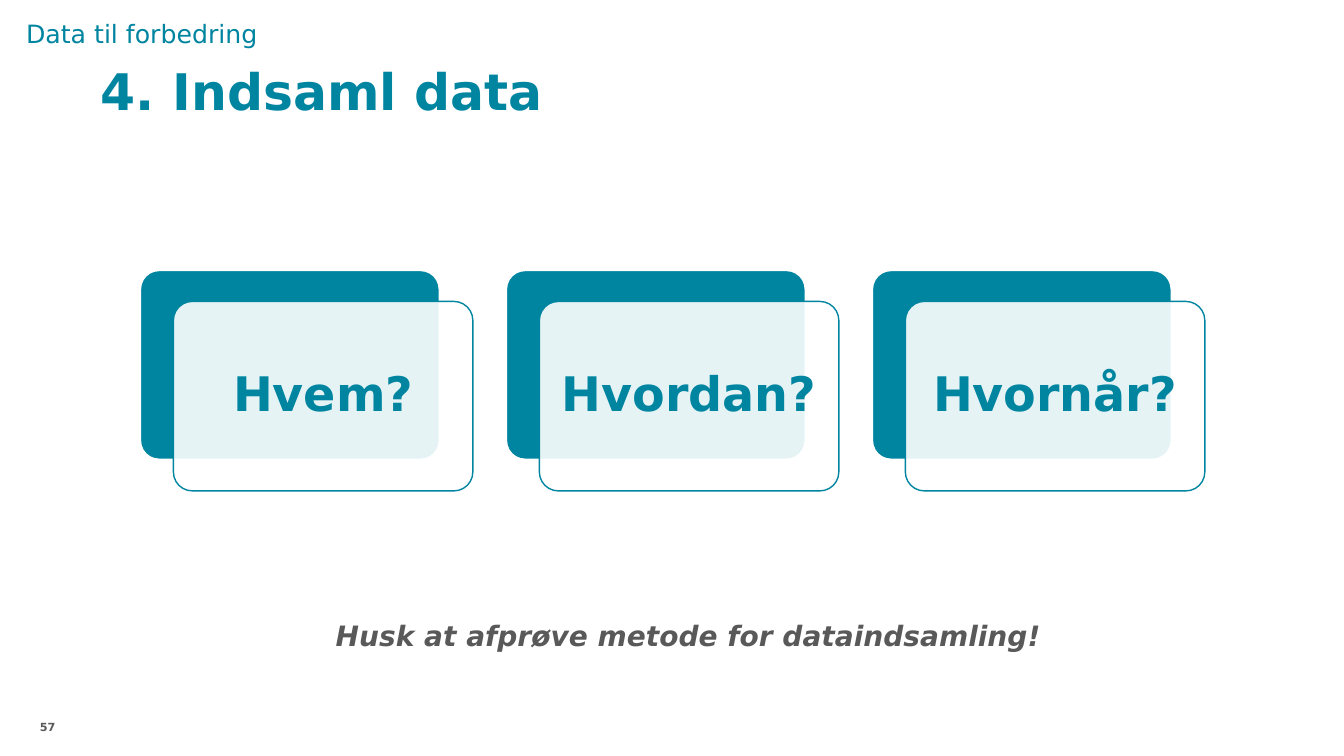
from lxml.etree import SubElement
from pptx import Presentation
from pptx.dml.color import RGBColor
from pptx.enum.shapes import MSO_SHAPE as Shape
from pptx.enum.text import MSO_ANCHOR as Anchor, PP_ALIGN as Align
from pptx.oxml.ns import qn
from pptx.util import Inches, Pt

FONT = "DejaVu Sans"
TEAL, TEXT_TEAL, GREY, WHITE = "0085A1", "0085A0", "595959", "FFFFFF"
QUESTIONS = ["Hvem?", "Hvordan?", "Hvornår?"]
CARD_WIDTH, CARD_HEIGHT = 2.97, 1.88
CARD_PITCH = 3.63
FRONT_SHIFT = 0.33, 0.31


def paint(color_format, hex_color):
    color_format.rgb = RGBColor.from_string(hex_color)


def write(frame, text, size, color, bold=False, italic=False, align=Align.LEFT,
          anchor=Anchor.TOP, inset=(0, 0), spacing=None):
    """Fill a text frame with one run; inset is (horizontal, vertical) in inches."""
    frame.word_wrap = True
    frame.vertical_anchor = anchor
    frame.margin_left = frame.margin_right = Inches(inset[0])
    frame.margin_top = frame.margin_bottom = Inches(inset[1])
    paragraph = frame.paragraphs[0]
    paragraph.alignment = align
    paragraph.line_spacing = spacing
    run = paragraph.add_run()
    run.text = text
    font = run.font
    font.name, font.size, font.bold, font.italic = FONT, Pt(size), bold, italic
    paint(font.color, color)


def add_label(slide, box, text, size, color, **style):
    label = slide.shapes.add_textbox(*map(Inches, box))
    write(label.text_frame, text, size, color, **style)


def add_panel(slide, left, top, fill, outline, outline_width):
    panel = slide.shapes.add_shape(
        Shape.ROUNDED_RECTANGLE,
        *map(Inches, (left, top, CARD_WIDTH, CARD_HEIGHT)))
    panel.adjustments[0] = 0.1
    panel.shadow.inherit = False
    panel.fill.solid()
    paint(panel.fill.fore_color, fill)
    paint(panel.line.color, outline)
    panel.line.width = Pt(outline_width)
    return panel


def add_question_card(slide, left, top, question):
    """A solid panel with a translucent panel shifted down and right over it."""
    add_panel(slide, left, top, TEAL, WHITE, 1.5)
    shift_x, shift_y = FRONT_SHIFT
    front = add_panel(slide, left + shift_x, top + shift_y, WHITE, TEAL, 1)
    fill_color = front.fill._xPr.find(qn("a:solidFill"))[0]
    SubElement(fill_color, qn("a:alpha"), val="90000")
    write(front.text_frame, question, 34, TEXT_TEAL, bold=True,
          align=Align.CENTER, anchor=Anchor.MIDDLE, inset=(0.14, 0.14), spacing=0.9)


def add_header(slide):
    add_label(slide, (1, 0.02, 10.55, 1.18), "4. Indsaml data", 36, TEAL,
              bold=True, anchor=Anchor.BOTTOM, spacing=0.9)
    add_label(slide, (0.16, 0.13, 6.67, 0.4), "Data til forbedring", 18, TEXT_TEAL,
              inset=(0.1, 0.05))


def add_question_row(slide, left, top):
    for column, question in enumerate(QUESTIONS):
        add_question_card(slide, left + column * CARD_PITCH, top, question)


def add_footer(slide):
    add_label(slide, (3.33, 6.14, 7.83, 0.39),
              "Husk at afprøve metode for dataindsamling!", 20, GREY,
              bold=True, italic=True)
    add_label(slide, (0.16, 7.15, 0.39, 0.35), "57", 8, GREY,
              bold=True, align=Align.RIGHT)


def main():
    deck = Presentation()
    deck.slide_width, deck.slide_height = Inches(13.33), Inches(7.5)
    slide = deck.slides.add_slide(deck.slide_layouts[6])
    add_header(slide)
    add_question_row(slide, 1.39, 2.68)
    add_footer(slide)
    deck.save("out.pptx")


if __name__ == "__main__":
    main()
